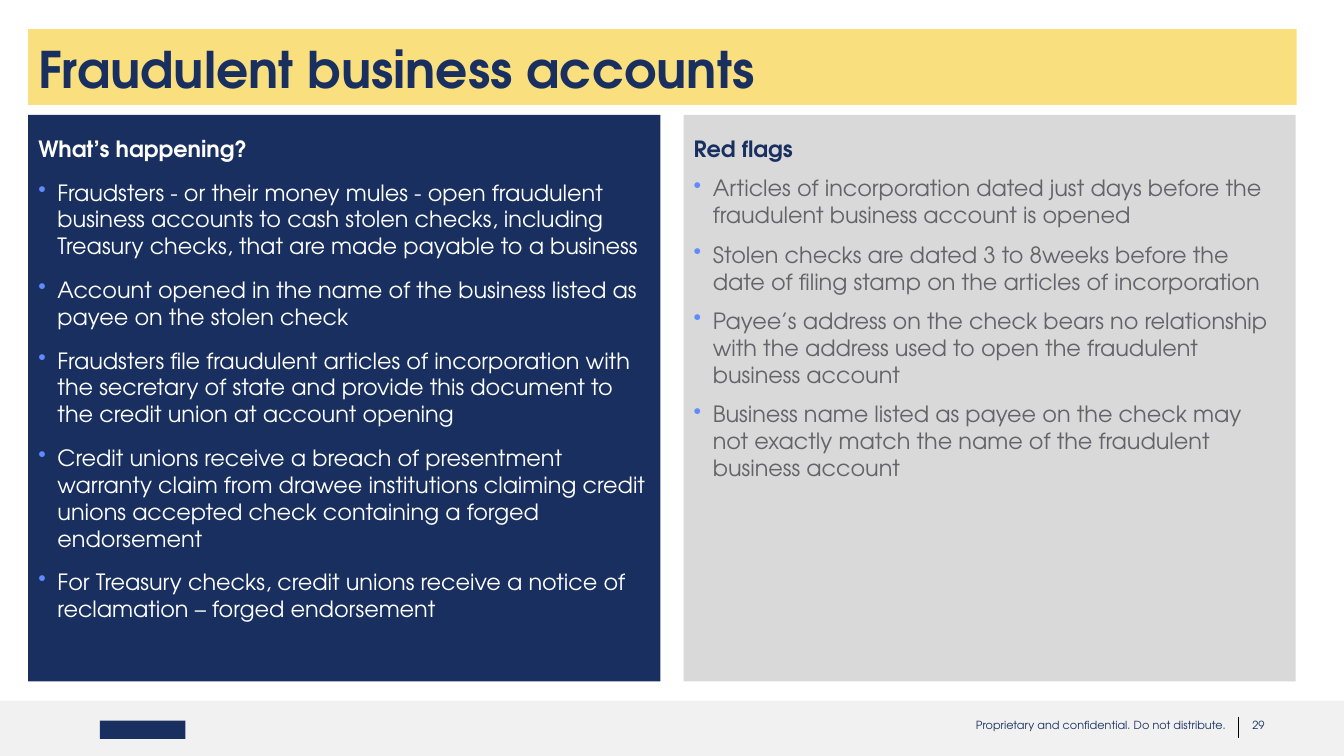
import pptx
import pptx.util
import pptx.dml.color
import pptx.enum.shapes
import pptx.enum.text
import lxml.etree

Inches, Pt = pptx.util.Inches, pptx.util.Pt
MSO_SHAPE = pptx.enum.shapes.MSO_SHAPE
ANCHOR = pptx.enum.text.MSO_ANCHOR

FONT = "TeX Gyre Adventor"
COLORS = {
    "navy": "182F60", "yellow": "F9DF7D", "panel": "D9D9D9", "footer": "F1F1F1",
    "bullet": "5F8BFF", "grey": "636368", "white": "FFFFFF", "black": "000000",
}
SLIDE_W, SLIDE_H = 13.33, 7.5
MARGIN = 0.28
PANEL_TOP, PANEL_H = 1.14, 5.62
HANG = 0.19

HAPPENING = [
    "Fraudsters - or their money mules - open fraudulent business accounts to cash "
    "stolen checks, including Treasury checks, that are made payable to a business",
    "Account opened in the name of the business listed as payee on the stolen check",
    "Fraudsters file fraudulent articles of incorporation with the secretary of state "
    "and provide this document to the credit union at account opening",
    "Credit unions receive a breach of presentment warranty claim from drawee "
    "institutions claiming credit unions accepted check containing a forged endorsement",
    "For Treasury checks, credit unions receive a notice of reclamation – forged endorsement",
]
RED_FLAGS = [
    "Articles of incorporation dated just days before the fraudulent business account is opened",
    "Stolen checks are dated 3 to 8weeks before the date of filing stamp on the articles "
    "of incorporation",
    "Payee’s address on the check bears no relationship with the address used to open "
    "the fraudulent business account",
    "Business name listed as payee on the check may not exactly match the name of the "
    "fraudulent business account",
]


def rgb(name):
    return pptx.dml.color.RGBColor.from_string(COLORS[name])


def add_block(slide, box, color):
    block = slide.shapes.add_shape(MSO_SHAPE.RECTANGLE, *map(Inches, box))
    block.shadow.inherit = False
    block.fill.solid()
    block.fill.fore_color.rgb = rgb(color)
    block.line.fill.background()


def prepare_frame(frame, left=0, top=0, anchor=ANCHOR.TOP):
    frame.word_wrap = True
    frame.auto_size = pptx.enum.text.MSO_AUTO_SIZE.NONE
    frame.vertical_anchor = anchor
    frame.margin_left, frame.margin_top = Inches(left), Inches(top)
    frame.margin_right = frame.margin_bottom = 0
    return frame


def add_frame(slide, box):
    return prepare_frame(slide.shapes.add_textbox(*map(Inches, box)).text_frame)


def write(paragraph, text, size=16, color="navy", bold=False, before=0, bullet=False,
          align=pptx.enum.text.PP_ALIGN.LEFT):
    paragraph.alignment = align
    paragraph.line_spacing = 1.0
    paragraph.space_before = Pt(before)
    if bullet:
        properties = paragraph._p.get_or_add_pPr()
        properties.set("marL", str(Inches(HANG)))
        properties.set("indent", str(-Inches(HANG)))
        ns = "{http://schemas.openxmlformats.org/drawingml/2006/main}"
        bullet_color = lxml.etree.SubElement(properties, ns + "buClr")
        lxml.etree.SubElement(bullet_color, ns + "srgbClr", val=COLORS["bullet"])
        lxml.etree.SubElement(properties, ns + "buChar", char="•")
    run = paragraph.add_run()
    run.text = text
    run.font.name, run.font.size, run.font.bold = FONT, Pt(size), bold
    run.font.color.rgb = rgb(color)


def add_title(slide, box, text):
    title = slide.shapes.title
    title.left, title.top, title.width, title.height = map(Inches, box)
    title.fill.solid()
    title.fill.fore_color.rgb = rgb("yellow")
    frame = prepare_frame(title.text_frame, left=0.1, top=0.03, anchor=ANCHOR.MIDDLE)
    write(frame.paragraphs[0], text, size=36, bold=True)


def add_panel(slide, box, heading, points, fill, heading_color, text_color, gap, right_pad):
    left, top, width, height = box
    add_block(slide, box, fill)
    frame = add_frame(slide, (left + 0.1, top + 0.2, width - 0.1 - right_pad, height - 0.4))
    write(frame.paragraphs[0], heading, color=heading_color, bold=True)
    for point in points:
        write(frame.add_paragraph(), point, color=text_color, before=gap, bullet=True)


def add_footer(slide, box):
    left, top, width, height = box
    right = left + width
    add_block(slide, box, "footer")
    add_block(slide, (left + 0.99, top + 0.2, 0.85, 0.18), "navy")
    divider_x = right - 1.05
    divider = slide.shapes.add_connector(
        pptx.enum.shapes.MSO_CONNECTOR.STRAIGHT,
        *map(Inches, (divider_x, top + 0.16, divider_x, top + 0.37)))
    divider.line.color.rgb = rgb("black")
    divider.line.width = Pt(0.5)
    lxml.etree.SubElement(
        divider._element.spPr,
        "{http://schemas.openxmlformats.org/drawingml/2006/main}effectLst")
    notice = add_frame(slide, (right - 3.65, top + 0.18, 2.55, 0.18))
    write(notice.paragraphs[0], "Proprietary and confidential. Do not distribute.", size=8)
    number = add_frame(slide, (right - 0.91, top + 0.18, 0.22, 0.18))
    write(number.paragraphs[0], "29", size=8)


def main():
    deck = pptx.Presentation()
    deck.slide_width, deck.slide_height = Inches(SLIDE_W), Inches(SLIDE_H)
    slide = deck.slides.add_slide(deck.slide_layouts[5])
    add_footer(slide, (0, 6.95, SLIDE_W, SLIDE_H - 6.95))
    add_title(slide, (MARGIN, 0.29, 12.58, 0.75), "Fraudulent business accounts")
    add_panel(slide, (MARGIN, PANEL_TOP, 6.27, PANEL_H), "What’s happening?", HAPPENING,
              fill="navy", heading_color="white", text_color="white", gap=12, right_pad=0.08)
    add_panel(slide, (6.78, PANEL_TOP, 6.07, PANEL_H), "Red flags", RED_FLAGS,
              fill="panel", heading_color="navy", text_color="grey", gap=9, right_pad=0.22)
    deck.save("out.pptx")


if __name__ == "__main__":
    main()
